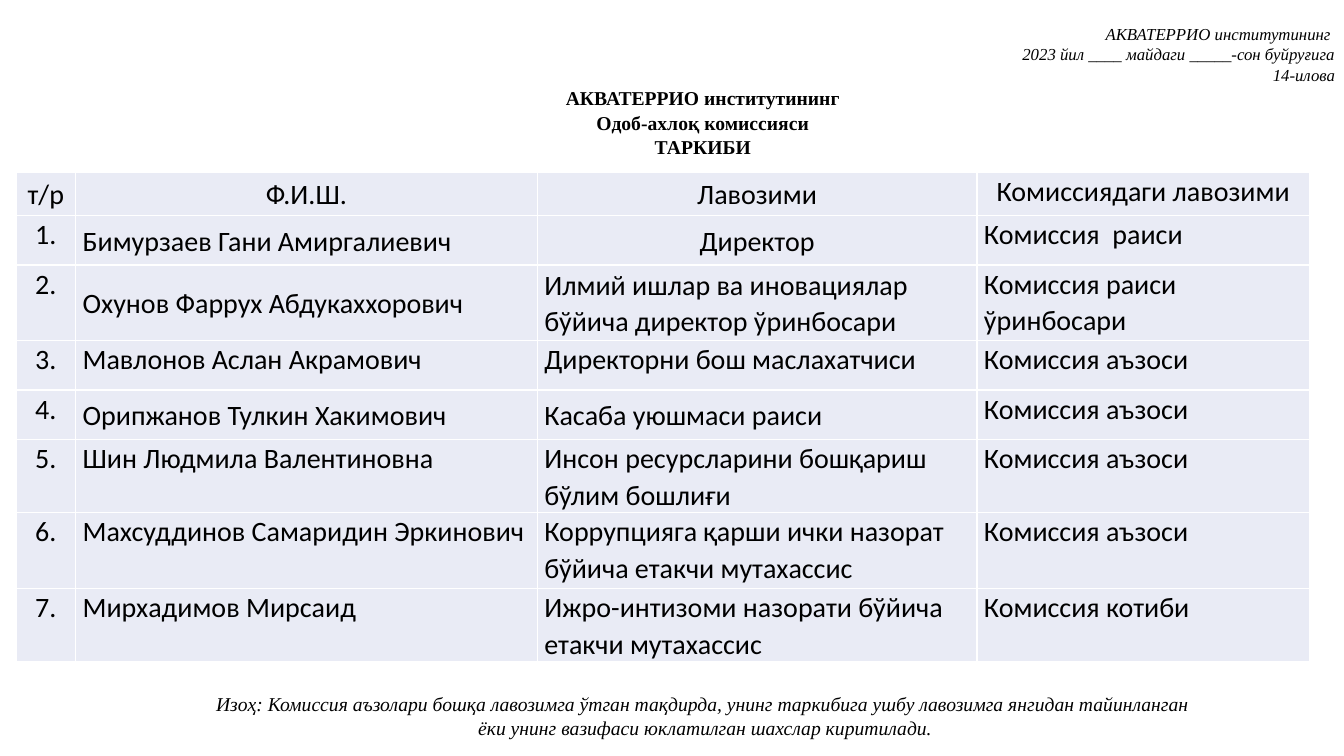
from dataclasses import dataclass

from lxml import etree
from pptx import Presentation
from pptx.dml.color import RGBColor
from pptx.enum.text import MSO_ANCHOR, PP_ALIGN
from pptx.oxml.ns import qn
from pptx.util import Inches, Pt

LEFT, CENTER, RIGHT = PP_ALIGN.LEFT, PP_ALIGN.CENTER, PP_ALIGN.RIGHT
TOP, MIDDLE = MSO_ANCHOR.TOP, MSO_ANCHOR.MIDDLE


@dataclass(frozen=True)
class Theme:
    """Colours, fonts and sizes of the slide."""

    ink: str = "000000"
    cell: str = "E9EBF5"
    border: str = "FFFFFF"
    table_font: str = "Calibri"
    letter_font: str = "Times New Roman"
    table_size: int = 20
    title_size: int = 14
    reference_size: int = 12


THEME = Theme()

COLUMN_WIDTHS = (0.59, 4.58, 4.36, 3.3)
ROW_HEIGHTS = (0.43, 0.49, 0.75, 0.49, 0.49, 0.49, 0.75, 0.49)
MIDDLE_ROWS = (1, 2, 4)
HEADER = ("т/р", "Ф.И.Ш.", "Лавозими", "Комиссиядаги лавозими")
MEMBERS = (
    ("Бимурзаев Гани Амиргалиевич", "Директор", "Комиссия  раиси"),
    ("Охунов Фаррух Абдукаххорович",
     "Илмий ишлар ва иновациялар бўйича директор ўринбосари",
     "Комиссия раиси ўринбосари"),
    ("Мавлонов Аслан Акрамович", "Директорни бош маслахатчиси", "Комиссия аъзоси"),
    ("Орипжанов Тулкин Хакимович", "Касаба уюшмаси раиси", "Комиссия аъзоси"),
    ("Шин Людмила Валентиновна",
     "Инсон ресурсларини бошқариш бўлим бошлиғи", "Комиссия аъзоси"),
    ("Махсуддинов Самаридин Эркинович",
     "Коррупцияга қарши ички назорат бўйича етакчи мутахассис", "Комиссия аъзоси"),
    ("Мирхадимов Мирсаид",
     "Ижро-интизоми назорати бўйича етакчи мутахассис", "Комиссия котиби"),
)

REFERENCE = (
    "АКВАТЕРРИО институтининг \v2023 йил ____ майдаги _____-сон буйруғига",
    "14-илова",
)
TITLE = ("АКВАТЕРРИО институтининг ", "Одоб-ахлоқ комиссияси ", "ТАРКИБИ ")
NOTE = (
    "Изoҳ: Комиссия аъзолари бошқа лавозимга ўтган тақдирда, "
    "унинг таркибига ушбу лавозимга янгидан тайинланган ",
    "ёки унинг вазифаси юклатилган шахслар киритилади.",
)
TABLE_GAP = 380


def style_font(font, name, size, bold=False, italic=False):
    """Set the face, size, weight and colour of a font."""
    font.name, font.size = name, Pt(size)
    font.bold, font.italic = bold, italic
    font.color.rgb = RGBColor.from_string(THEME.ink)


def add_borders(cell):
    """Draw a thin line on the four sides of a cell."""
    properties = cell._tc.get_or_add_tcPr()
    for position, side in enumerate(("a:lnL", "a:lnR", "a:lnT", "a:lnB")):
        line = etree.Element(qn(side), w=str(Pt(1)))
        fill = etree.SubElement(line, qn("a:solidFill"))
        etree.SubElement(fill, qn("a:srgbClr"), val=THEME.border)
        properties.insert(position, line)


def fill_cell(cell, text, align, anchor):
    """Write and style one table cell."""
    cell.fill.solid()
    cell.fill.fore_color.rgb = RGBColor.from_string(THEME.cell)
    cell.margin_left = cell.margin_right = Inches(0.07)
    cell.margin_top = cell.margin_bottom = 0
    cell.vertical_anchor = anchor
    cell.text = text
    paragraph = cell.text_frame.paragraphs[0]
    paragraph.alignment, paragraph.line_spacing = align, 1.07
    style_font(paragraph.font, THEME.table_font, THEME.table_size)
    add_borders(cell)


def cell_layout(row, column):
    """Return the alignment and anchor of a table cell."""
    centered = row == 0 or column == 0 or (row, column) == (1, 2)
    if row == 0:
        middle = column < 3
    else:
        middle = row in MIDDLE_ROWS and column in (1, 2)
    return CENTER if centered else LEFT, MIDDLE if middle else TOP


def add_members_table(slide):
    """Add the table of commission members."""
    rows = [HEADER]
    rows += [(f"{number}.", *member) for number, member in enumerate(MEMBERS, 1)]
    members = slide.shapes.add_table(
        len(rows), len(HEADER), Inches(0.16), Inches(1.71),
        Inches(sum(COLUMN_WIDTHS)), Inches(sum(ROW_HEIGHTS))).table
    for column, width in zip(members.columns, COLUMN_WIDTHS):
        column.width = Inches(width)
    for row, height in zip(members.rows, ROW_HEIGHTS):
        row.height = Inches(height)
    for r, texts in enumerate(rows):
        for c, text in enumerate(texts):
            fill_cell(members.cell(r, c), text, *cell_layout(r, c))


def add_lines(frame, lines, align, size, bold=False, italic=False, gap=0):
    """Append paragraphs of one style, with a gap in points above the first."""
    for number, line in enumerate(lines):
        first = frame.paragraphs[0]
        paragraph = frame.add_paragraph() if first.runs else first
        paragraph.text = line
        paragraph.alignment, paragraph.line_spacing = align, 1.04
        paragraph.space_before = Pt(0 if number else gap)
        paragraph._p.get_or_add_pPr().set("indent", str(Inches(0.49)))
        style_font(paragraph.font, THEME.letter_font, size, bold, italic)


def add_letter(slide):
    """Add the order reference, the title and the closing note."""
    frame = slide.shapes.add_textbox(
        Inches(0.16), Inches(0.18), Inches(13.18), Inches(7.2)).text_frame
    frame.word_wrap, frame.vertical_anchor = True, MIDDLE
    add_lines(frame, REFERENCE, RIGHT, THEME.reference_size, italic=True)
    add_lines(frame, TITLE, CENTER, THEME.title_size, bold=True)
    add_lines(frame, NOTE, CENTER, THEME.title_size, italic=True, gap=TABLE_GAP)


def main():
    """Build and save the slide."""
    deck = Presentation()
    deck.slide_width, deck.slide_height = Inches(13.33), Inches(7.5)
    slide = deck.slides.add_slide(deck.slide_layouts[6])
    add_members_table(slide)
    add_letter(slide)
    deck.save("out.pptx")


if __name__ == "__main__":
    main()
